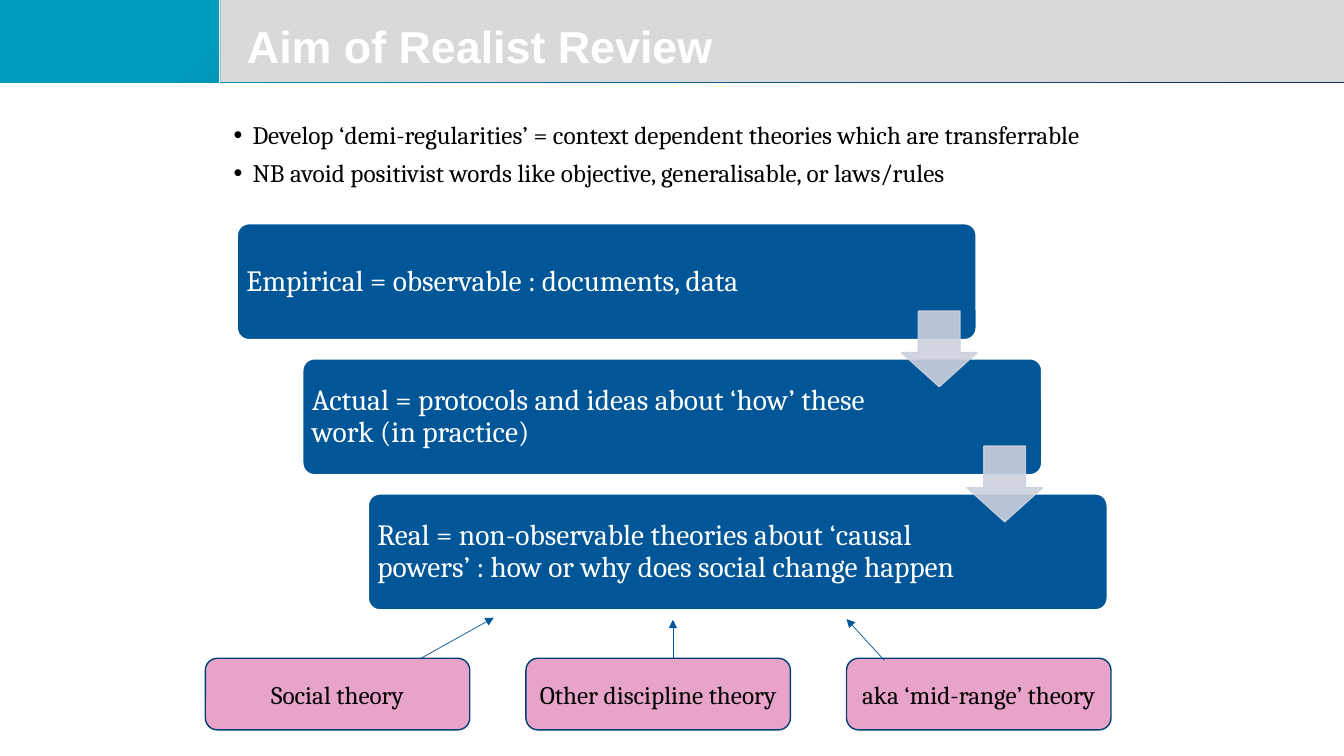
from dataclasses import dataclass

from lxml import etree
from pptx import Presentation
from pptx.dml.color import RGBColor
from pptx.enum.shapes import MSO_CONNECTOR, MSO_SHAPE
from pptx.enum.text import MSO_ANCHOR, PP_ALIGN
from pptx.oxml.ns import qn
from pptx.util import Pt

RECTANGLE = MSO_SHAPE.RECTANGLE
ROUNDED = MSO_SHAPE.ROUNDED_RECTANGLE
DOWN_ARROW = MSO_SHAPE.DOWN_ARROW
STRAIGHT = MSO_CONNECTOR.STRAIGHT
MIDDLE = MSO_ANCHOR.MIDDLE
LEFT, CENTER = PP_ALIGN.LEFT, PP_ALIGN.CENTER


@dataclass(frozen=True)
class Theme:
    """Colours, fonts and type sizes of the deck."""
    white: str = "FFFFFF"
    black: str = "000000"
    grey: str = "D9D9D9"
    blue: str = "005697"
    arrow: str = "CCD1DD"
    pink: str = "E8A3C9"
    navy: str = "004070"
    gradient: tuple = ((17, "009BBD"), (50, "0E6394"), (100, "1B2A6B"))
    heading_font: str = "Arial"
    body_font: str = "Cambria"
    title_size: float = 32
    level_size: float = 21
    body_size: float = 18


THEME = Theme()
BULLETS = (
    "Develop ‘demi-regularities’ = context dependent theories which are transferrable",
    "NB avoid positivist words like objective, generalisable, or laws/rules",
)
LEVELS = (
    "Empirical = observable : documents, data",
    "Actual = protocols and ideas about ‘how’ these work (in practice)",
    "Real = non-observable theories about ‘causal powers’ : how or why does social change happen",
)
THEORIES = ("Social theory", "Other discipline theory", "aka ‘mid-range’ theory")
POINTERS = ((154, 0, 206, -29), (334, 0, 334, -27.5), (485, 1.5, 458, -28))


def rgb(code):
    """Turn a hex code into a colour."""
    return RGBColor.from_string(code)


def add_span(para, text, size, color, font=THEME.body_font, bold=False):
    """Add one formatted run to a paragraph."""
    span = para.add_run()
    span.text = text
    span.font.name = font
    span.font.size = Pt(size)
    span.font.bold = bold
    span.font.color.rgb = rgb(color)


def add_block(page, kind, box, fill, line=None):
    """Add a flat preset shape with an optional one-point outline."""
    block = page.shapes.add_shape(kind, *map(Pt, box))
    block.shadow.inherit = False
    block.fill.solid()
    block.fill.fore_color.rgb = rgb(fill)
    if line:
        block.line.color.rgb = rgb(line)
        block.line.width = Pt(1)
    else:
        block.line.fill.background()
    return block


def add_line(page, ends, color, arrow=False):
    """Add a thin straight line, with an arrowhead at its end if asked."""
    line = page.shapes.add_connector(STRAIGHT, *map(Pt, ends))
    line.line.color.rgb = rgb(color)
    line.line.width = Pt(0.5)
    if arrow:
        etree.SubElement(line.line._get_or_add_ln(), qn("a:tailEnd"), type="triangle")
    etree.SubElement(line._element.spPr, qn("a:effectLst"))


def apply_gradient(block, stops):
    """Fill a shape with a diagonal gradient of the given stops."""
    block.fill.gradient()
    block.fill.gradient_angle = 315
    stop_list = block._element.spPr.find(qn("a:gradFill")).find(qn("a:gsLst"))
    for stop in list(stop_list):
        stop_list.remove(stop)
    for percent, color in stops:
        stop = etree.SubElement(stop_list, qn("a:gs"), pos=str(percent * 1000))
        etree.SubElement(stop, qn("a:srgbClr"), val=color)


def build_header(page, box, text):
    """Draw the banner and place the title on it."""
    left, top, width, height = box
    divider = left + 157.5
    banner = add_block(page, RECTANGLE, box, THEME.blue)
    apply_gradient(banner, THEME.gradient)
    add_block(page, RECTANGLE, (divider, top, left + width - divider, height - 0.6), THEME.grey)
    add_line(page, (divider - 0.5, top, divider - 0.5, top + 70.5), THEME.white)
    title = page.shapes.title
    title.left, title.top = Pt(left + 169.2), Pt(top + 7.2)
    title.width, title.height = Pt(620.6), Pt(55.4)
    page.shapes._spTree.append(title._element)
    frame = title.text_frame
    frame.word_wrap = True
    frame.vertical_anchor = MIDDLE
    para = frame.paragraphs[0]
    para.alignment = LEFT
    para.line_spacing = 0.9
    add_span(para, text, THEME.title_size, THEME.white, THEME.heading_font, True)


def build_bullets(page, box, items):
    """Write the bulleted introduction."""
    frame = page.shapes.add_textbox(*map(Pt, box)).text_frame
    frame.word_wrap = True
    for index, item in enumerate(items):
        para = frame.add_paragraph() if index else frame.paragraphs[0]
        settings = para._p.get_or_add_pPr()
        settings.set("marL", str(Pt(13.5)))
        settings.set("indent", str(-Pt(13.5)))
        etree.SubElement(settings, qn("a:buFont"), typeface="Arial")
        etree.SubElement(settings, qn("a:buChar"), char="•")
        para.line_spacing = 0.9
        if index:
            para.space_before = Pt(7.5)
        add_span(para, item, THEME.body_size, THEME.black)


def add_step_arrow(page, left, top):
    """Add a translucent arrow leading to the next level."""
    arrow = add_block(page, DOWN_ARROW, (left, top, 54, 54), THEME.arrow, THEME.arrow)
    arrow.adjustments[0], arrow.adjustments[1] = 0.55, 0.45
    for color in arrow._element.spPr.iter(qn("a:srgbClr")):
        etree.SubElement(color, qn("a:alpha"), val="90000")


def build_staircase(page, box, levels):
    """Draw the descending levels and the arrows between them."""
    left, top, width, height = box
    step_x, step_y = 46.8, 96.5
    step_width = width - step_x * (len(levels) - 1)
    step_height = height - step_y * (len(levels) - 1)
    corners = [(left + step_x * i, top + step_y * i) for i in range(len(levels))]
    for (x, y), text in zip(corners, levels):
        level = add_block(page, ROUNDED, (x, y, step_width, step_height), THEME.blue, THEME.white)
        level.adjustments[0] = 0.1
        frame = level.text_frame
        frame.word_wrap = True
        frame.vertical_anchor = MIDDLE
        frame.margin_left, frame.margin_right = Pt(4.1), Pt(104)
        para = frame.paragraphs[0]
        para.alignment = LEFT
        para.line_spacing = 0.9
        add_span(para, text, THEME.level_size, THEME.white)
    for x, y in corners[:-1]:
        add_step_arrow(page, x + 474.4, y + 62.4)


def build_theories(page, box, theories):
    """Draw the row of theories and the arrows rising from it."""
    left, top, width, height = box
    card_width = 188.9
    pitch = (width - card_width) / (len(theories) - 1)
    for index, text in enumerate(theories):
        place = (left + pitch * index, top, card_width, height)
        frame = add_block(page, ROUNDED, place, THEME.pink, THEME.navy).text_frame
        frame.word_wrap = True
        frame.vertical_anchor = MIDDLE
        para = frame.paragraphs[0]
        para.alignment = CENTER
        add_span(para, text, THEME.body_size, THEME.black)
    for x1, y1, x2, y2 in POINTERS:
        add_line(page, (left + x1, top + y1, left + x2, top + y2), THEME.blue, True)


def main():
    """Build the slide and save the deck."""
    deck = Presentation()
    deck.slide_width, deck.slide_height = Pt(960), Pt(540)
    page = deck.slides.add_slide(deck.slide_layouts.get_by_name("Title Only"))
    build_header(page, (0, 0, 960, 59.2), "Aim of Realist Review")
    build_bullets(page, (159.8, 84.2, 620.6, 87.8), BULLETS)
    build_staircase(page, (169.5, 159.8, 621.4, 275.8), LEVELS)
    build_theories(page, (146.7, 470.2, 646.9, 51.1), THEORIES)
    deck.save("out.pptx")


if __name__ == "__main__":
    main()
